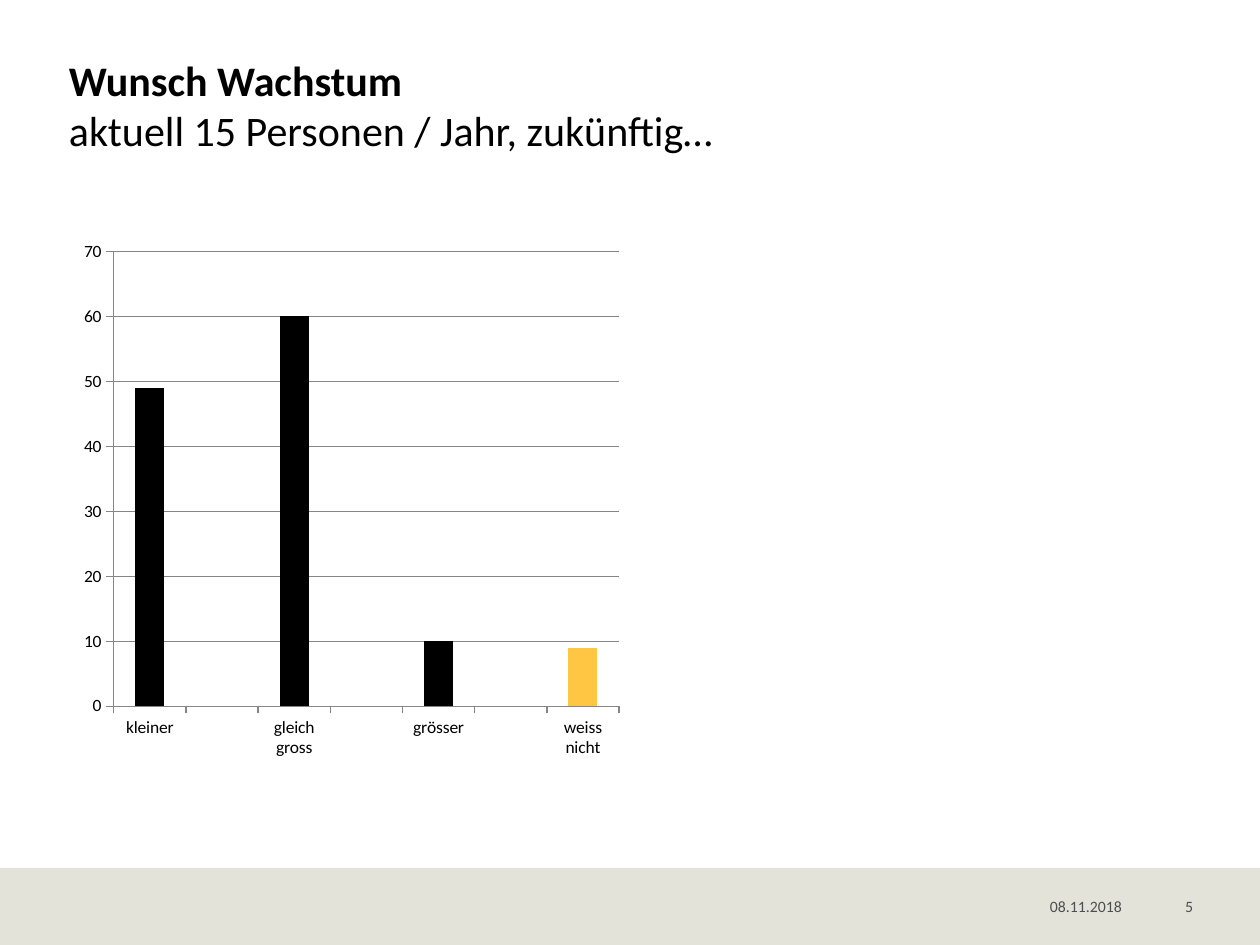
from dataclasses import dataclass

from pptx import Presentation
from pptx.chart.data import CategoryChartData
from pptx.dml.color import RGBColor
from pptx.enum.chart import XL_CHART_TYPE, XL_TICK_MARK
from pptx.enum.shapes import MSO_SHAPE
from pptx.enum.text import MSO_ANCHOR, PP_ALIGN
from pptx.oxml import parse_xml
from pptx.oxml.ns import nsdecls, qn
from pptx.util import Pt


@dataclass(frozen=True)
class Theme:
    font: str = "Calibri"
    ink: str = "000000"
    accent: str = "FFC644"
    band: str = "E4E3D9"
    muted: str = "4C4F52"
    grid: str = "868686"
    head: int = 24
    label: int = 10
    small: int = 9


THEME = Theme()
SCALE = 914400 / 126


def px(*sizes):
    return [round(size * SCALE) for size in sizes]


def rgb(code):
    return RGBColor.from_string(code)


def style(font, size, color, bold=False):
    font.name = THEME.font
    font.size = Pt(size)
    font.color.rgb = rgb(color)
    font.bold = bold


def add_text(slide, box, words, size, color, bold=False,
             align=PP_ALIGN.LEFT, anchor=MSO_ANCHOR.TOP):
    frame = slide.shapes.add_textbox(*px(*box)).text_frame
    frame.word_wrap = True
    frame.vertical_anchor = anchor
    frame.margin_left = frame.margin_right = 0
    frame.margin_top = frame.margin_bottom = 0
    para = frame.paragraphs[0]
    para.text = words
    para.alignment = align
    style(para.font, size, color, bold)


def add_head(slide, box, title, body):
    left, top, width, height = box
    half = height // 2
    add_text(slide, (left, top, width, half), title, THEME.head, THEME.ink, True)
    add_text(slide, (left, top + half, width, half), body, THEME.head, THEME.ink)


def add_foot(slide, box, date, page):
    left, top, width, height = box
    band = slide.shapes.add_shape(MSO_SHAPE.RECTANGLE, *px(*box))
    band.shadow.inherit = False
    band.fill.solid()
    band.fill.fore_color.rgb = rgb(THEME.band)
    band.line.fill.background()
    parts = [(1050, 89, date, PP_ALIGN.LEFT), (1139, 54, page, PP_ALIGN.RIGHT)]
    for start, span, words, align in parts:
        add_text(slide, (left + start, top + 5, span, 43), words,
                 THEME.small, THEME.muted, align=align, anchor=MSO_ANCHOR.BOTTOM)


def set_plot(chart, x, y, w, h):
    area = chart.element.find(".//" + qn("c:plotArea"))
    for old in area.findall(qn("c:layout")):
        area.remove(old)
    parts = [("layoutTarget", "inner"), ("xMode", "edge"), ("yMode", "edge"),
             ("x", x), ("y", y), ("w", w), ("h", h)]
    marks = "".join(f'<c:{tag} val="{val}"/>' for tag, val in parts)
    area.insert(0, parse_xml(
        f'<c:layout {nsdecls("c")}><c:manualLayout>{marks}</c:manualLayout></c:layout>'))


def add_bars(slide, box, cats, vals):
    data = CategoryChartData(number_format="General")
    data.categories = cats
    data.add_series("Series 1", vals)
    chart = slide.shapes.add_chart(
        XL_CHART_TYPE.COLUMN_CLUSTERED, *px(*box), data).chart
    chart.has_legend = False
    chart.has_title = False
    style(chart.font, THEME.label, THEME.ink)
    set_plot(chart, 0.053, 0.034, 0.906, 0.888)

    plot = chart.plots[0]
    plot.gap_width = 150
    plot.vary_by_categories = False
    bars = plot.series[0]
    last = bars.points[len(cats) - 1]
    for item, color in ((bars, THEME.ink), (last, THEME.accent)):
        item.format.fill.solid()
        item.format.fill.fore_color.rgb = rgb(color)

    scale = chart.value_axis
    scale.minimum_scale, scale.maximum_scale, scale.major_unit = 0, 70, 10
    scale.has_major_gridlines = True
    for axis in (chart.category_axis, scale):
        axis.major_tick_mark = XL_TICK_MARK.OUTSIDE
        axis.minor_tick_mark = XL_TICK_MARK.NONE
    for part in (chart.category_axis, scale, scale.major_gridlines):
        part.format.line.color.rgb = rgb(THEME.grid)
        part.format.line.width = Pt(0.75)


def main():
    deck = Presentation()
    deck.slide_width, deck.slide_height = px(1260, 945)
    slide = deck.slides.add_slide(deck.slide_layouts[6])
    add_foot(slide, (0, 868, 1260, 77), "08.11.2018", "5")
    add_head(slide, (69, 55, 1123, 100), "Wunsch Wachstum",
             "aktuell 15 Personen / Jahr, zukünftig…")
    add_bars(slide, (84, 234, 558, 523),
             ["kleiner", "", "gleich gross", "", "grösser", "", "weiss nicht"],
             [49, None, 60, None, 10, None, 9])
    deck.save("out.pptx")


if __name__ == "__main__":
    main()
